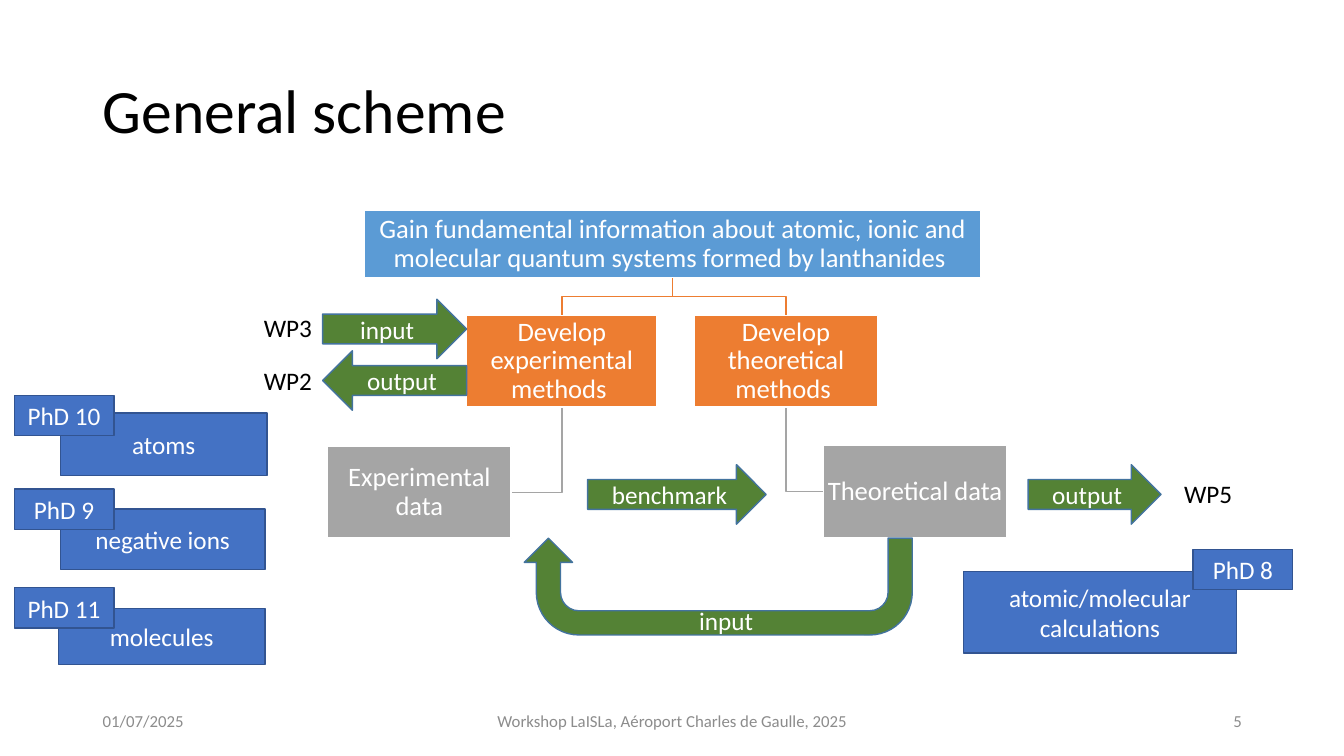
import pptx
import pptx.util
import pptx.dml.color
import pptx.enum.shapes
import pptx.enum.text

Cm = pptx.util.Cm
Pt = pptx.util.Pt
SHAPE = pptx.enum.shapes.MSO_SHAPE
ALIGN = pptx.enum.text.PP_ALIGN
ANCHOR = pptx.enum.text.MSO_ANCHOR


def rgb(value):
    return pptx.dml.color.RGBColor.from_string(value)


class Scheme:
    """Style of the scheme and the slide it is drawn on; lengths in cm."""
    font = "Calibri"
    black, white, muted = "000000", "FFFFFF", "8C8C8C"
    sky, orange, grey = "5B9BD5", "ED7D31", "A5A5A5"
    green, green_edge = "548235", "43739E"
    blue, blue_edge = "4472C4", "325491"

    def __init__(self, slide):
        self.s = slide

    def add_words(self, sp, text, size, color, align, anchor, spacing=1.0):
        tf = sp.text_frame
        tf.vertical_anchor = anchor
        p = tf.paragraphs[0]
        p.alignment = align
        p.line_spacing = spacing
        r = p.add_run()
        r.text = text
        r.font.name = self.font
        r.font.size = Pt(size)
        r.font.color.rgb = rgb(color)
        return tf

    def text(self, box, text, size=18, color=black, align=ALIGN.LEFT,
             anchor=ANCHOR.MIDDLE, spacing=1.0, wrap=True):
        sp = self.s.shapes.add_textbox(*map(Cm, box))
        tf = self.add_words(sp, text, size, color, align, anchor, spacing)
        tf.word_wrap = wrap

    def label(self, x, y, text, color=black, width=1.73):
        self.text((x, y, width, 1.02), text, color=color,
                  anchor=ANCHOR.TOP, wrap=False)

    def shape(self, kind, box, fill, edge, text="", size=18, spacing=1.0):
        sp = self.s.shapes.add_shape(kind, *map(Cm, box))
        sp.shadow.inherit = False
        sp.fill.solid()
        sp.fill.fore_color.rgb = rgb(fill)
        sp.line.color.rgb = rgb(edge)
        sp.line.width = Pt(1)
        if text:
            self.add_words(sp, text, size, self.white, ALIGN.CENTER,
                           ANCHOR.MIDDLE, spacing)
        return sp

    def node(self, box, fill, text):
        sp = self.shape(SHAPE.RECTANGLE, box, fill, self.white, text, 19, 0.9)
        tf = sp.text_frame
        tf.margin_left = tf.margin_right = Cm(0.03)
        tf.margin_top = tf.margin_bottom = Cm(0.03)

    def arrow(self, kind, x, y, width, text):
        self.shape(kind, (x, y, width, 1.5), self.green, self.green_edge, text)

    def project(self, box, task, tag_x, tag_y, tag):
        self.shape(SHAPE.RECTANGLE, box, self.blue, self.blue_edge, task)
        self.shape(SHAPE.RECTANGLE, (tag_x, tag_y, 2.51, 1.02),
                   self.blue, self.blue_edge, tag)

    def polyline(self, points, color):
        start, *rest = [(Cm(x), Cm(y)) for x, y in points]
        builder = self.s.shapes.build_freeform(*start)
        builder.add_line_segments(rest, close=False)
        sp = builder.convert_to_shape()
        sp.shadow.inherit = False
        sp.fill.background()
        sp.line.color.rgb = rgb(color)
        sp.line.width = Pt(1)

    def fork(self, parent, child):
        """Link the bottom of parent to the top of child."""
        x1, y1 = parent[0] + parent[2] / 2, parent[1] + parent[3]
        x2, y2 = child[0] + child[2] / 2, child[1]
        mid = (y1 + y2) / 2
        self.polyline([(x1, y1), (x1, mid), (x2, mid), (x2, y2)], self.orange)

    def hook(self, parent, child):
        """Link the bottom of parent to the facing side of child."""
        x1, y1 = parent[0] + parent[2] / 2, parent[1] + parent[3]
        x2 = child[0] if child[0] > x1 else child[0] + child[2]
        y2 = child[1] + child[3] / 2
        self.polyline([(x1, y1), (x1, y2), (x2, y2)], self.grey)


def main():
    prs = pptx.Presentation()
    prs.slide_width, prs.slide_height = Cm(33.87), Cm(19.05)
    d = Scheme(prs.slides.add_slide(prs.slide_layouts[6]))

    # Title and footer
    d.text((2.34, 1.02, 29.21, 3.68), "General scheme", 44, spacing=0.9)
    for x, width, text, align in (
            (2.34, 7.62, "01/07/2025", ALIGN.LEFT),
            (11.23, 11.43, "Workshop LaISLa, Aéroport Charles de Gaulle, 2025",
             ALIGN.CENTER),
            (23.93, 7.62, "5", ALIGN.RIGHT)):
        d.text((x, 17.65, width, 1.02), text, 12, d.muted, align)

    # Tree of goal, methods and data
    goal = (9.19, 5.31, 15.52, 1.68)
    exp_methods = (11.76, 7.95, 4.8, 2.31)
    theo_methods = (17.5, 7.95, 4.62, 2.31)
    exp_data = (8.26, 11.25, 4.62, 2.31)
    theo_data = (20.75, 11.23, 4.62, 2.31)
    for methods, data in ((theo_methods, theo_data), (exp_methods, exp_data)):
        d.hook(methods, data)
        d.fork(goal, methods)
    d.node(goal, d.sky, "Gain fundamental information about atomic, ionic and "
                        "molecular quantum systems formed by lanthanides ")
    d.node(exp_methods, d.orange, "Develop experimental methods ")
    d.node(exp_data, d.grey, "Experimental data")
    d.node(theo_methods, d.orange, "Develop theoretical methods ")
    d.node(theo_data, d.grey, "Theoretical data")

    # Flows between data and work packages
    d.arrow(SHAPE.RIGHT_ARROW, 14.81, 11.71, 4.5, "benchmark")
    d.arrow(SHAPE.RIGHT_ARROW, 25.91, 11.71, 3.35, "output")
    d.arrow(SHAPE.RIGHT_ARROW, 8.13, 7.54, 3.63, "input")
    d.arrow(SHAPE.LEFT_ARROW, 8.13, 8.84, 3.63, "output")
    d.label(6.4, 7.75, "WP3")
    d.label(6.4, 9.09, "WP2")
    d.label(29.59, 11.94, "WP5")

    # Feedback from theory to experiment
    sp = d.shape(SHAPE.U_TURN_ARROW, (13.21, 13.56, 9.78, 2.44),
                 d.green, d.green_edge)
    sp.rotation = 180
    for i, value in enumerate((0.25, 0.25, 0.25, 0.44, 1)):
        sp.adjustments[i] = value
    d.label(17.37, 15.14, "input", d.white, 1.88)

    # PhD projects
    d.project((1.52, 10.41, 5.21, 1.57), "atoms", 0.36, 9.96, "PhD 10")
    d.project((1.52, 12.83, 5.16, 1.52), "negative ions", 0.36, 12.32, "PhD 9")
    d.project((1.47, 15.34, 5.21, 1.4), "molecules", 0.36, 14.81, "PhD 11")
    d.project((24.28, 14.4, 6.88, 2.06), "atomic/molecular calculations",
              30.07, 13.84, "PhD 8")

    prs.save("out.pptx")


if __name__ == "__main__":
    main()
